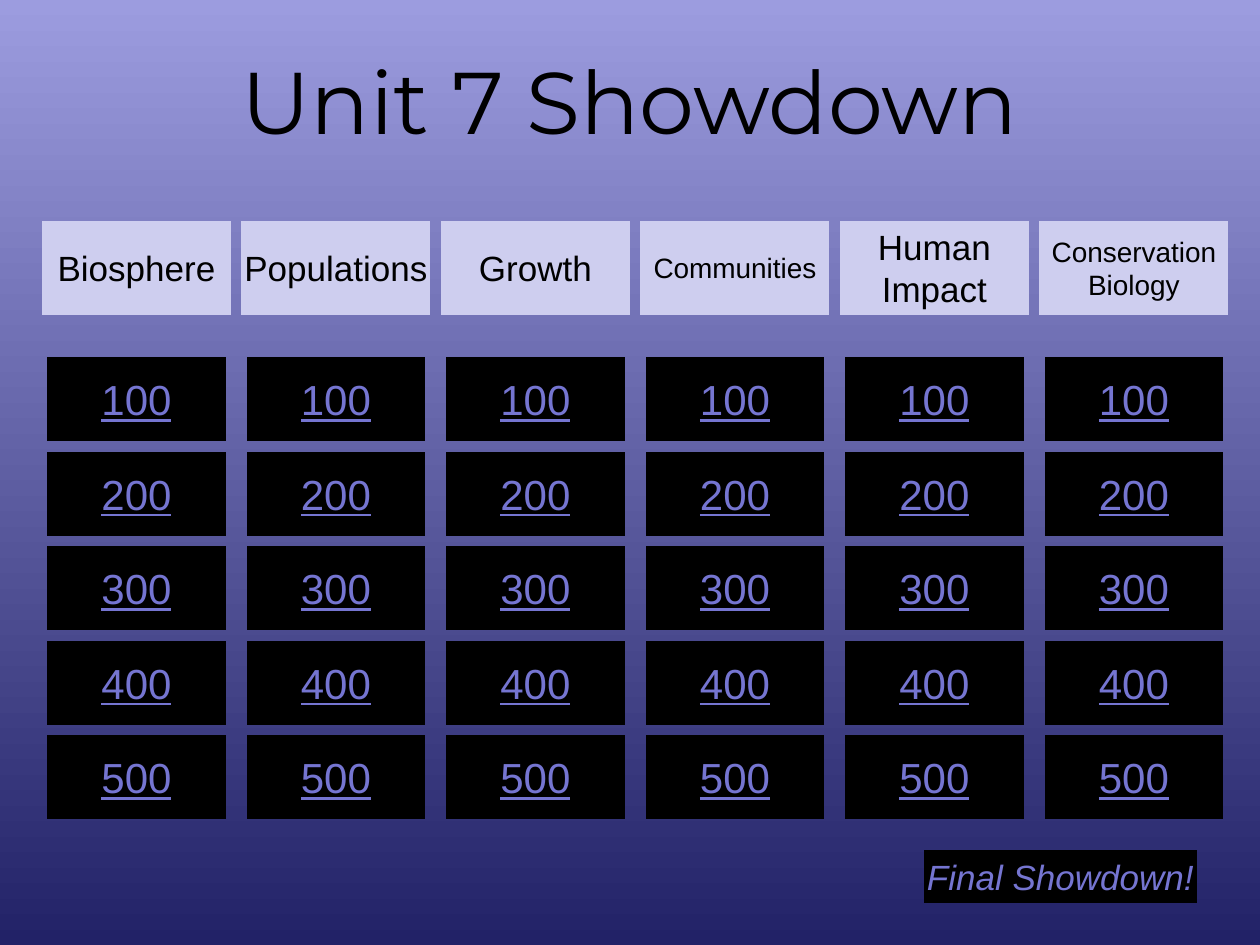
from dataclasses import dataclass

from pptx import Presentation
from pptx import util as u
from pptx.dml.color import RGBColor
from pptx.enum import shapes, text

TITLE = "Unit 7 Showdown"
FINAL = "Final Showdown!"
CATEGORIES = [
    ("Biosphere", "large"),
    ("Populations", "large"),
    ("Growth", "large"),
    ("Communities", "small"),
    ("Human\nImpact", "large"),
    ("Conservation\nBiology", "small"),
]
POINTS = [100, 200, 300, 400, 500]


@dataclass(frozen=True)
class Theme:
    sky: str = "9C9CDF"
    night: str = "222267"
    header: str = "CECEEF"
    tile: str = "000000"
    ink: str = "000000"
    link: str = "7575D1"
    title_font: str = "Montserrat"
    body_font: str = "Arial"
    title_size: int = 50
    points_size: int = 24
    large: int = 20
    small: int = 16


THEME = Theme()
GRID_COLUMNS, GRID_ROWS = 240, 180
CELL = u.Inches(10) // GRID_COLUMNS

TITLE_AREA = (8, 4, 224, 30)
FINAL_AREA = (176, 162, 52, 10)
BOARD_LEFT, COLUMN_STEP = 8, 38
HEADER_TOP, HEADER_WIDTH, HEADER_HEIGHT = 42, 36, 18
TILE_TOP, ROW_STEP = 68, 18
TILE_WIDTH, TILE_HEIGHT = 34, 16
TILE_INSET = (HEADER_WIDTH - TILE_WIDTH) // 2


def write(box, words, size, color, font=THEME.body_font, wrap=False,
          underline=None, italic=None):
    frame = box.text_frame
    frame.word_wrap = wrap
    frame.vertical_anchor = text.MSO_ANCHOR.MIDDLE
    for index, line in enumerate(words.split("\n")):
        para = frame.add_paragraph() if index else frame.paragraphs[0]
        para.alignment = text.PP_ALIGN.CENTER
        span = para.add_run()
        span.text = line
        span.font.name = font
        span.font.size = u.Pt(size)
        span.font.color.rgb = RGBColor.from_string(color)
        span.font.underline = underline
        span.font.italic = italic


def place(area):
    return [CELL * cells for cells in area]


def add_button(page, area, fill, words, **style):
    box = page.shapes.add_shape(shapes.MSO_SHAPE.ACTION_BUTTON_CUSTOM, *place(area))
    box.shadow.inherit = False
    box.fill.solid()
    box.fill.fore_color.rgb = RGBColor.from_string(fill)
    box.line.fill.background()
    write(box, words, **style)


def paint_background(page):
    fill = page.background.fill
    fill.gradient()
    fill.gradient_angle = 270
    for stop, color in zip(fill.gradient_stops, (THEME.sky, THEME.night)):
        stop.color.rgb = RGBColor.from_string(color)


def main():
    deck = Presentation()
    deck.slide_width = CELL * GRID_COLUMNS
    deck.slide_height = CELL * GRID_ROWS
    page = deck.slides.add_slide(deck.slide_layouts[6])
    paint_background(page)

    title = page.shapes.add_textbox(*place(TITLE_AREA))
    write(title, TITLE, size=THEME.title_size, color=THEME.ink,
          font=THEME.title_font, wrap=True)

    for column, (category, size) in enumerate(CATEGORIES):
        left = BOARD_LEFT + column * COLUMN_STEP
        add_button(page, (left, HEADER_TOP, HEADER_WIDTH, HEADER_HEIGHT),
                   THEME.header, category, size=getattr(THEME, size), color=THEME.ink)
        for row, points in enumerate(POINTS):
            top = TILE_TOP + row * ROW_STEP
            add_button(page, (left + TILE_INSET, top, TILE_WIDTH, TILE_HEIGHT),
                       THEME.tile, str(points), size=THEME.points_size,
                       color=THEME.link, underline=True)

    add_button(page, FINAL_AREA, THEME.tile, FINAL, size=THEME.large,
               color=THEME.link, italic=True)
    deck.save("out.pptx")


if __name__ == "__main__":
    main()
